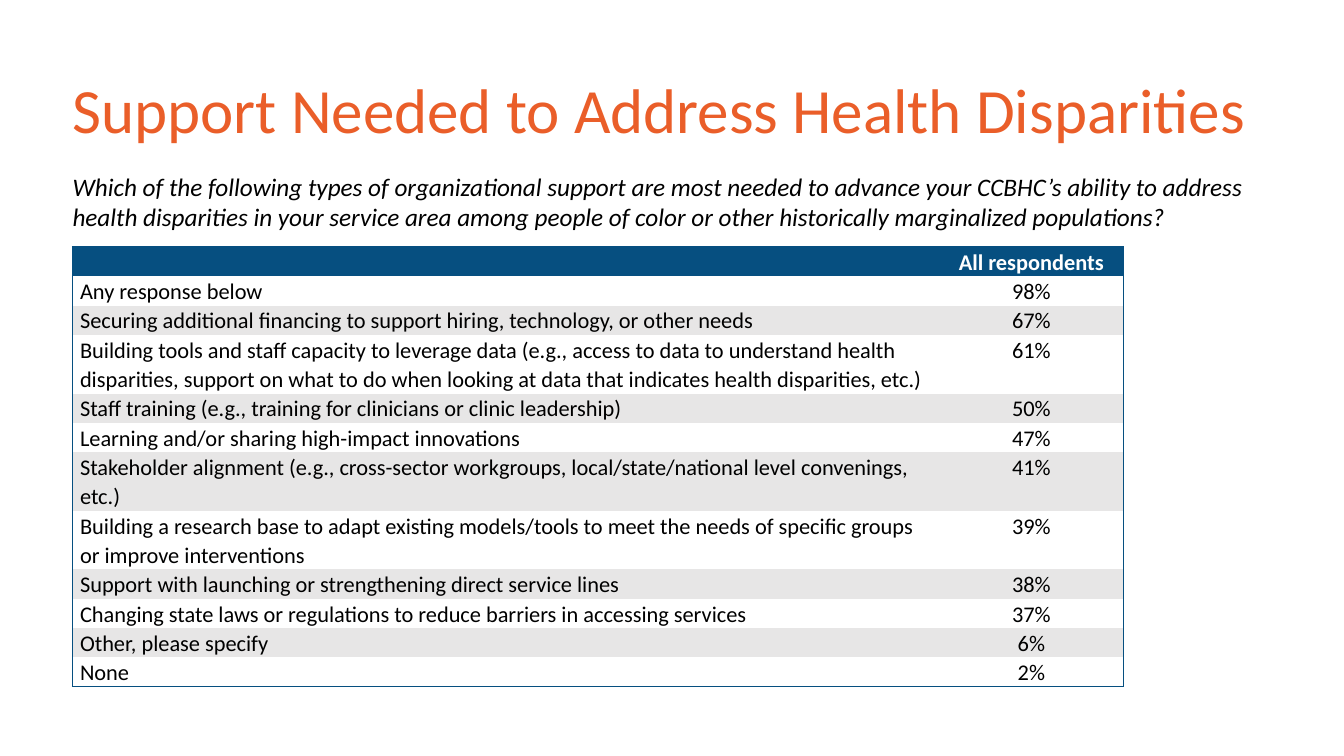
import pptx
import pptx.util
import pptx.dml.color
import pptx.enum.text
import pptx.oxml.ns
from lxml import etree

Pt = pptx.util.Pt
qn = pptx.oxml.ns.qn
ALIGN = pptx.enum.text.PP_ALIGN
ANCHOR = pptx.enum.text.MSO_ANCHOR

TITLE = "Support Needed to Address Health Disparities"
QUESTION = (
    "Which of the following types of organizational support are most needed to advance "
    "your CCBHC’s ability to address health disparities in your service area among "
    "people of color or other historically marginalized populations?"
)
ROWS = [
    ("", "All respondents"),
    ("Any response below", "98%"),
    ("Securing additional financing to support hiring, technology, or other needs", "67%"),
    ("Building tools and staff capacity to leverage data (e.g., access to data to "
     "understand health disparities, support on what to do when looking at data that "
     "indicates health disparities, etc.)", "61%"),
    ("Staff training (e.g., training for clinicians or clinic leadership)", "50%"),
    ("Learning and/or sharing high-impact innovations", "47%"),
    ("Stakeholder alignment (e.g., cross-sector workgroups, local/state/national level "
     "convenings, etc.)", "41%"),
    ("Building a research base to adapt existing models/tools to meet the needs of "
     "specific groups or improve interventions", "39%"),
    ("Support with launching or strengthening direct service lines", "38%"),
    ("Changing state laws or regulations to reduce barriers in accessing services", "37%"),
    ("Other, please specify", "6%"),
    ("None", "2%"),
]
COLORS = {"orange": "EA5E29", "navy": "064F80", "gray": "E7E6E6",
          "white": "FFFFFF", "black": "000000"}
FONT = "Calibri"
WIDTHS = (619.2, 131.4)
LINE = 20.9
WRAP_AT = 95  # characters that fit on one line of the first column
PLAIN = "{2D5ABB26-0587-4C30-8999-92F81FD0307C}"  # table style without grid


def rgb(name):
    return pptx.dml.color.RGBColor.from_string(COLORS[name])


def write(frame, text, size=16, color="black", bold=False, italic=False,
          align=ALIGN.LEFT, lead=1.0):
    para = frame.paragraphs[0]
    para.alignment = align
    para.line_spacing = lead
    para.space_before = Pt(0)
    if not text:
        etree.SubElement(para._p, qn("a:endParaRPr"), sz=str(size * 100))
        return
    run = para.add_run()
    run.text = text
    font = run.font
    font.name, font.size = FONT, Pt(size)
    font.bold, font.italic = bold, italic
    font.color.rgb = rgb(color)


def place(holder, left, top, width, height, anchor):
    holder.left, holder.top = Pt(left), Pt(top)
    holder.width, holder.height = Pt(width), Pt(height)
    frame = holder.text_frame
    frame.word_wrap = True
    frame.auto_size = pptx.enum.text.MSO_AUTO_SIZE.NONE
    frame.vertical_anchor = anchor
    return frame


def border(cell, sides):
    props = cell._tc.get_or_add_tcPr()
    for side in sides:
        line = etree.SubElement(props, qn("a:ln" + side), w=str(Pt(1)))
        fill = etree.SubElement(line, qn("a:solidFill"))
        etree.SubElement(fill, qn("a:srgbClr"), val=COLORS["navy"])


def draw_table(slide):
    lines = [1 + (len(label) > WRAP_AT) for label, _ in ROWS]
    frame = slide.shapes.add_table(len(ROWS), 2, Pt(51.8), Pt(176.4),
                                   Pt(sum(WIDTHS)), Pt(LINE * sum(lines)))
    table = frame.table
    table._tbl.tblPr.find(qn("a:tableStyleId")).text = PLAIN
    table.horz_banding = False
    for col, width in zip(table.columns, WIDTHS):
        col.width = Pt(width)
    last = len(ROWS) - 1
    for r, row in enumerate(ROWS):
        table.rows[r].height = Pt(LINE * lines[r])
        head = r == 0
        back = "navy" if head else ("white", "gray")[(r + 1) % 2]
        for c, text in enumerate(row):
            cell = table.cell(r, c)
            cell.margin_left = cell.margin_right = Pt(5.4)
            cell.margin_top = cell.margin_bottom = Pt(0)
            border(cell, "LR"[c] + "T" * head + "B" * (r == last))
            cell.fill.solid()
            cell.fill.fore_color.rgb = rgb(back)
            write(cell.text_frame, text, color="white" if head else "black",
                  bold=head, align=ALIGN.CENTER if c else ALIGN.LEFT, lead=1.07)


def main():
    deck = pptx.Presentation()
    deck.slide_width, deck.slide_height = Pt(960), Pt(540)
    slide = deck.slides.add_slide(deck.slide_layouts[1])
    title, body = slide.placeholders

    frame = place(title, 44.6, 28.8, 871.2, 104.4, ANCHOR.MIDDLE)
    write(frame, TITLE, size=45, color="orange", lead=0.9)

    frame = place(body, 44.6, 118.8, 871.2, 341.3, ANCHOR.TOP)
    props = frame.paragraphs[0]._p.get_or_add_pPr()
    props.set("marL", "0")
    props.set("indent", "0")
    etree.SubElement(props, qn("a:buNone"))
    write(frame, QUESTION, size=18, italic=True)

    draw_table(slide)
    deck.save("out.pptx")


if __name__ == "__main__":
    main()
